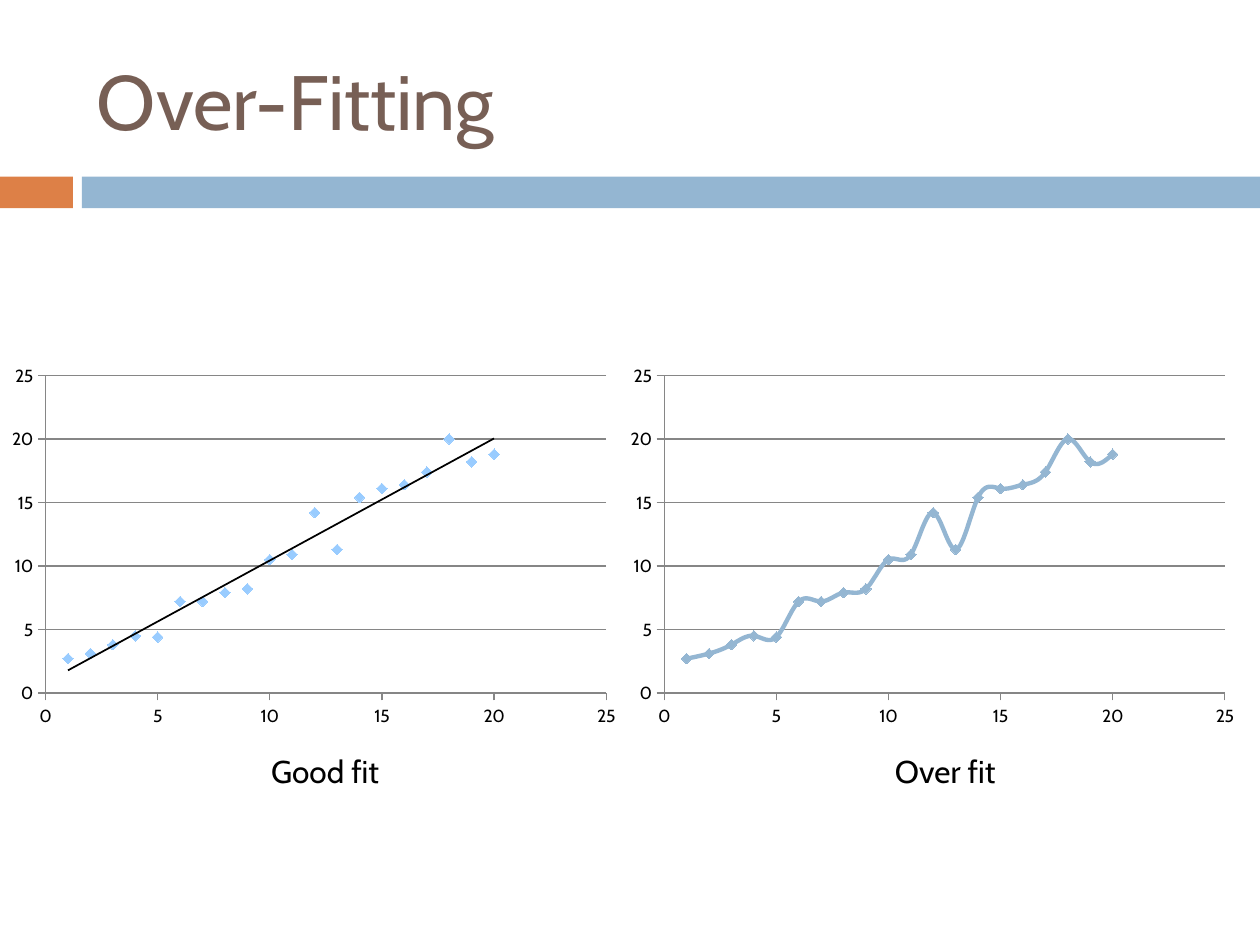
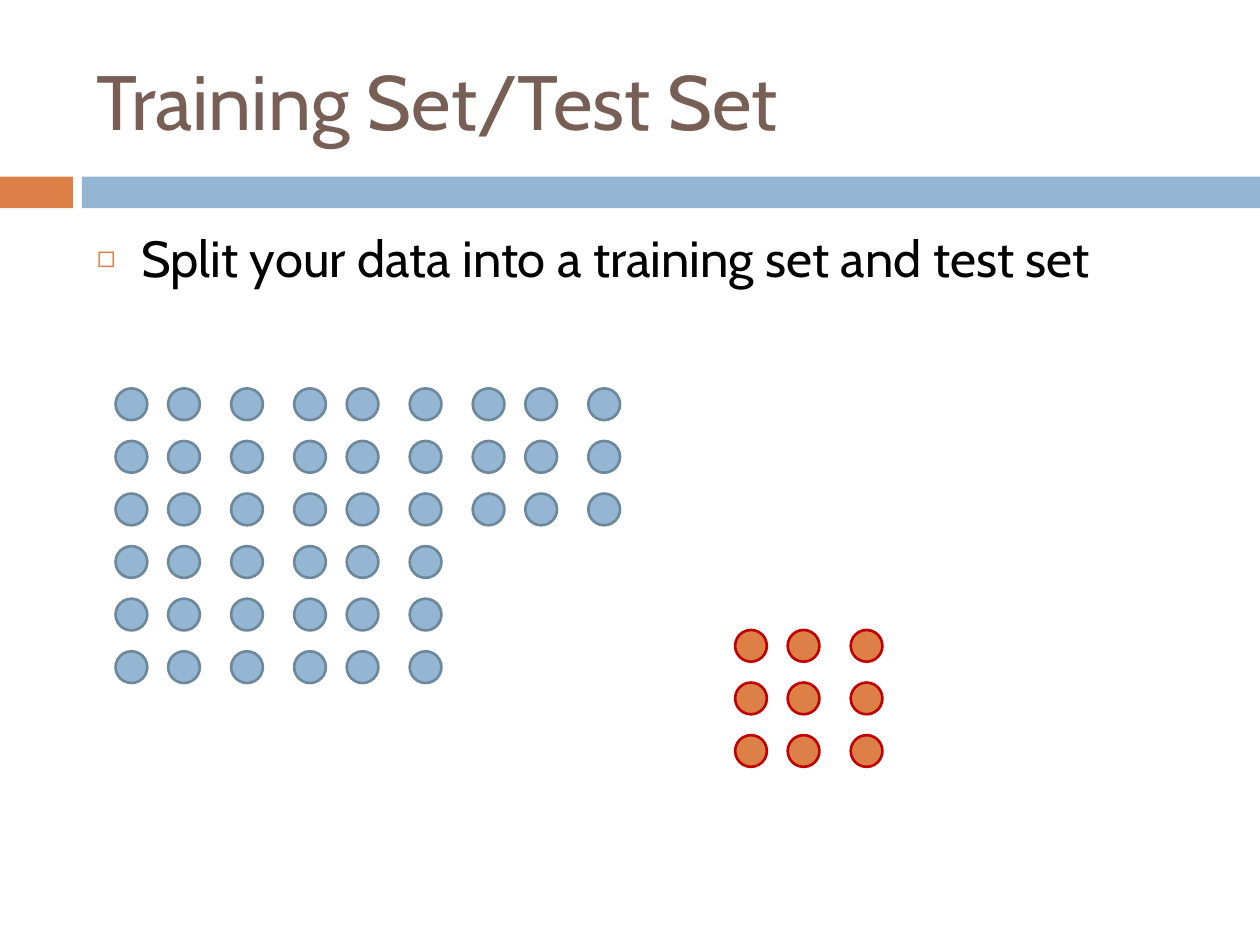
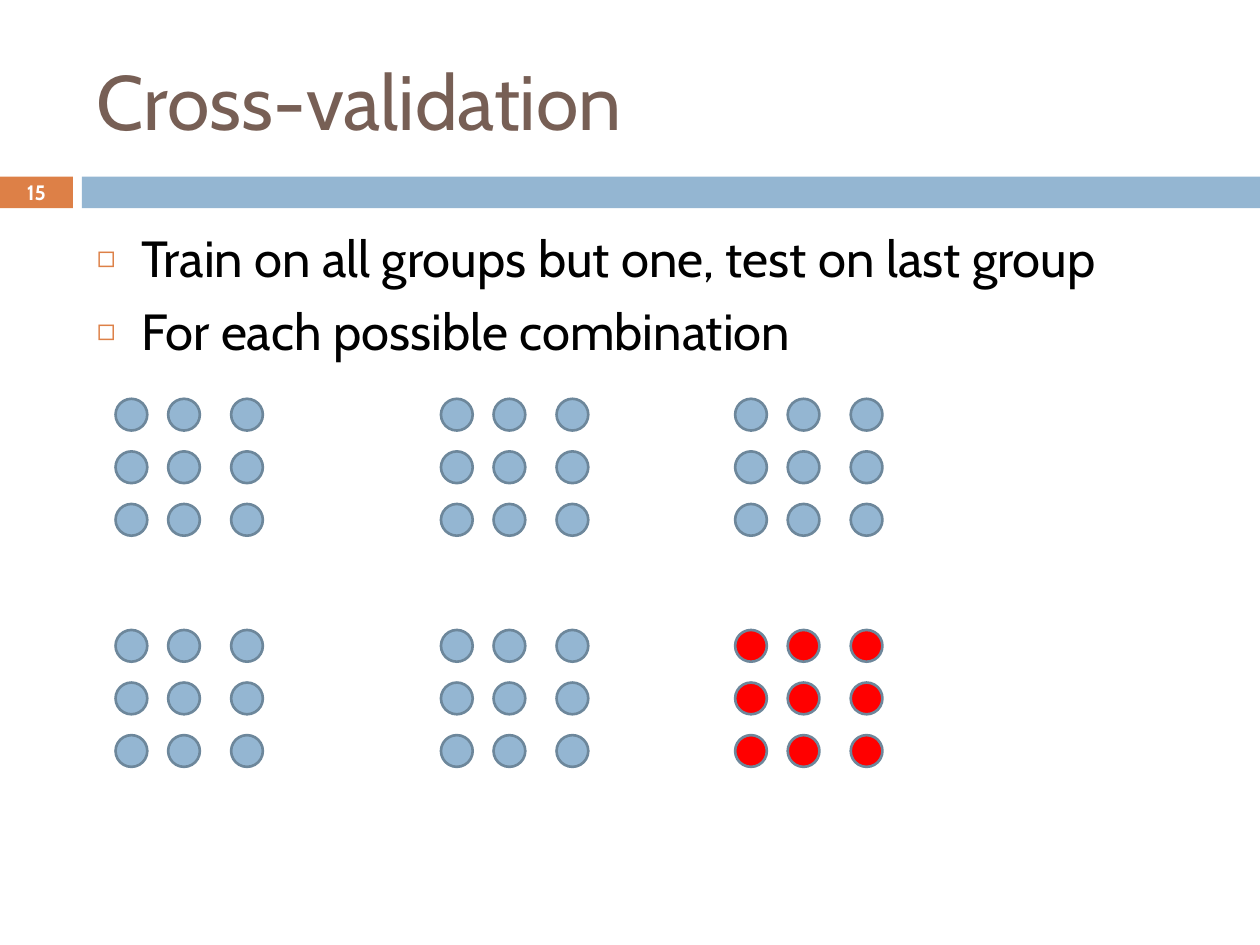
from dataclasses import dataclass
from itertools import product

from lxml.etree import SubElement
from pptx import Presentation
from pptx.chart.data import XyChartData
from pptx.dml.color import RGBColor
from pptx.enum.chart import XL_CHART_TYPE as Chart, XL_MARKER_STYLE as Marker
from pptx.enum.chart import XL_TICK_MARK as Tick
from pptx.enum.shapes import MSO_SHAPE as Shape
from pptx.enum.text import MSO_ANCHOR as Anchor, MSO_AUTO_SIZE as AutoSize
from pptx.enum.text import PP_ALIGN as Align
from pptx.oxml import parse_xml
from pptx.oxml.ns import nsdecls, qn
from pptx.util import Cm, Pt

FONT = "Cabin"
BLACK, WHITE, BROWN = "000000", "FFFFFF", "775F55"
ORANGE, BLUE, SLATE, GREY = "DD8047", "94B6D2", "6D879B", "868686"
LIGHT_BLUE, DARK_RED, RED = "99CCFF", "C00000", "FF0000"

TITLE_ONLY, TITLE_AND_BODY = 5, 1

DOT = 0.64
DOT_COLUMNS = (0, 1.06, 2.33)
DOT_ROWS = (0, 1.06, 2.12)

SAMPLES = (2.7, 3.1, 3.8, 4.5, 4.4, 7.2, 7.2, 7.9, 8.2, 10.5,
           10.9, 14.2, 11.3, 15.4, 16.1, 16.4, 17.4, 20, 18.2, 18.8)


@dataclass(frozen=True)
class Box:
    """A rectangle in centimetres."""
    left: float
    top: float
    width: float
    height: float

    def lengths(self) -> tuple:
        return Cm(self.left), Cm(self.top), Cm(self.width), Cm(self.height)


@dataclass(frozen=True)
class DotStyle:
    fill: str
    line: str


@dataclass(frozen=True)
class FitChart:
    caption: str
    box: Box
    caption_box: Box
    kind: Chart
    marker: str
    over_fit: bool


TITLE_BOX = Box(1.7, 0.64, 22.66, 2.74)
BODY_BOX = Box(1.7, 4.45, 22.66, 12.5)
NUMBER_BOX = Box(0, 3.53, 1.47, 0.69)
BANDS = ((Box(0, 3.56, 1.47, 0.64), ORANGE),
         (Box(1.65, 3.56, 23.75, 0.64), BLUE))

TRAINING = DotStyle(BLUE, SLATE)
TEST = DotStyle(ORANGE, DARK_RED)
HELD_OUT = DotStyle(RED, SLATE)

FIT_CHARTS = (
    FitChart("Over fit", Box(12.5, 7.19, 12.7, 7.62), Box(13.34, 15.04, 11.43, 1.02),
             Chart.XY_SCATTER_SMOOTH, BLUE, True),
    FitChart("Good fit", Box(0.03, 7.19, 12.7, 7.62), Box(0.84, 15.04, 11.43, 1.02),
             Chart.XY_SCATTER, LIGHT_BLUE, False),
)


def rgb(color: str) -> RGBColor:
    return RGBColor.from_string(color)


def assign(obj, **values) -> None:
    for name, value in values.items():
        setattr(obj, name, value)


def set_font(font, size: float, color: str, bold: bool = False) -> None:
    assign(font, name=FONT, size=Pt(size), bold=bold)
    font.color.rgb = rgb(color)


def set_line(line, color: str, width: float) -> None:
    line.color.rgb = rgb(color)
    line.width = Pt(width)


def place(sp, box: Box) -> None:
    assign(sp, **dict(zip(("left", "top", "width", "height"), box.lengths())))


def add_filled(s, preset: Shape, box: Box, fill: str):
    sp = s.shapes.add_shape(preset, *box.lengths())
    sp.shadow.inherit = False
    sp.fill.solid()
    sp.fill.fore_color.rgb = rgb(fill)
    sp.line.fill.background()
    return sp


def add_text(s, text: str, box: Box, size: float, color: str, bold: bool = False) -> None:
    """Add a centred text box."""
    tf = s.shapes.add_textbox(*box.lengths()).text_frame
    assign(tf, word_wrap=True, vertical_anchor=Anchor.MIDDLE)
    p = tf.paragraphs[0]
    p.alignment = Align.CENTER
    r = p.add_run()
    r.text = text
    set_font(r.font, size, color, bold)


def add_slide(prs, layout: int, title: str):
    """Add a slide with the shared bands and title style."""
    s = prs.slides.add_slide(prs.slide_layouts[layout])
    for box, color in BANDS:
        add_filled(s, Shape.RECTANGLE, box, color)
    sp = s.shapes.title
    place(sp, TITLE_BOX)
    tf = sp.text_frame
    tf.text = title
    assign(tf, auto_size=AutoSize.NONE, vertical_anchor=Anchor.MIDDLE)
    p = tf.paragraphs[0]
    p.alignment = Align.LEFT
    set_font(p.runs[0].font, 44, BROWN)
    return s


def fill_body(s, items: list[str]) -> None:
    sp = s.placeholders[1]
    place(sp, BODY_BOX)
    tf = sp.text_frame
    tf.text = "\n".join(items)
    tf.auto_size = AutoSize.NONE
    for p in tf.paragraphs:
        p.space_before = Pt(7)
        set_font(p.runs[0].font, 29, BLACK)
        add_bullet(p)


def add_bullet(p) -> None:
    pPr = p._p.get_or_add_pPr()
    pPr.set("marL", str(Cm(0.89)))
    pPr.set("indent", str(-Cm(0.89)))
    SubElement(SubElement(pPr, qn("a:buClr")), qn("a:srgbClr"), val=ORANGE)
    SubElement(pPr, qn("a:buSzPct"), val="60000")
    SubElement(pPr, qn("a:buChar"), char="◻")


def add_dot_group(s, left: float, top: float, style: DotStyle) -> None:
    """Draw one group of three by three dots."""
    for dx, dy in product(DOT_COLUMNS, DOT_ROWS):
        dot = add_filled(s, Shape.OVAL, Box(left + dx, top + dy, DOT, DOT), style.fill)
        set_line(dot.line, style.line, 1.5)


def add_trendline(series) -> None:
    series._element.find(qn("c:xVal")).addprevious(parse_xml(
        f'<c:trendline {nsdecls("c", "a")}><c:spPr><a:ln w="{Pt(1)}"><a:solidFill>'
        f'<a:srgbClr val="{BLACK}"/></a:solidFill></a:ln></c:spPr>'
        '<c:trendlineType val="linear"/><c:dispRSqr val="0"/><c:dispEq val="0"/>'
        '</c:trendline>'))


def set_plot_layout(chart) -> None:
    """Fix the inner plot area as fractions of the chart."""
    plot_area = chart._chartSpace.chart.plotArea
    for old in plot_area.findall(qn("c:layout")):
        plot_area.remove(old)
    layout = parse_xml(f'<c:layout {nsdecls("c")}/>')
    manual = SubElement(layout, qn("c:manualLayout"))
    for tag, value in (("layoutTarget", "inner"), ("xMode", "edge"), ("yMode", "edge"),
                       ("x", "0.07"), ("y", "0.05"), ("w", "0.89"), ("h", "0.84")):
        SubElement(manual, qn(f"c:{tag}"), val=value)
    plot_area.insert(0, layout)


def add_fit_chart(s, fit: FitChart) -> None:
    data = XyChartData()
    points = data.add_series("Series 1")
    for x, y in enumerate(SAMPLES, 1):
        points.add_data_point(x, y)
    chart = s.shapes.add_chart(fit.kind, *fit.box.lengths(), data).chart
    assign(chart, has_legend=False, has_title=False)
    set_font(chart.font, 10, BLACK)
    set_plot_layout(chart)

    for axis in (chart.category_axis, chart.value_axis):
        assign(axis, minimum_scale=0, maximum_scale=25, major_unit=5,
               major_tick_mark=Tick.OUTSIDE, minor_tick_mark=Tick.NONE,
               has_major_gridlines=axis is not chart.category_axis, has_title=False)
        set_line(axis.format.line, GREY, 0.75)
    chart.category_axis.has_major_gridlines = False
    set_line(chart.value_axis.major_gridlines.format.line, GREY, 0.75)

    plot = chart.plots[0]
    plot.vary_by_categories = False
    series = plot.series[0]
    assign(series.marker, style=Marker.DIAMOND, size=6)
    series.marker.format.fill.solid()
    series.marker.format.fill.fore_color.rgb = rgb(fit.marker)
    series.marker.format.line.fill.background()
    series._element.find(qn("c:smooth")).set("val", str(int(fit.over_fit)))
    if fit.over_fit:
        set_line(series.format.line, BLUE, 2.5)
    else:
        series.format.line.fill.background()
        add_trendline(series)


def build_over_fitting(prs) -> None:
    s = add_slide(prs, TITLE_ONLY, "Over-Fitting")
    for fit in FIT_CHARTS:
        add_fit_chart(s, fit)
        add_text(s, fit.caption, fit.caption_box, 18, BLACK)


def build_training_test(prs) -> None:
    s = add_slide(prs, TITLE_AND_BODY, "Training Set/Test Set")
    fill_body(s, ["Split your data into a training set and test set"])
    for row, groups in enumerate((3, 2)):
        for column in range(groups):
            add_dot_group(s, 2.33 + 3.6 * column, 7.83 + 3.18 * row, TRAINING)
    add_dot_group(s, 14.82, 12.7, TEST)


def build_cross_validation(prs) -> None:
    s = add_slide(prs, TITLE_AND_BODY, "Cross-validation")
    fill_body(s, ["Train on all groups but one, test on last group",
                  "For each possible combination"])
    add_text(s, "15", NUMBER_BOX, 11.9, WHITE, bold=True)
    *training, last = product((8.04, 12.7), (2.33, 8.89, 14.82))
    for top, left in training:
        add_dot_group(s, left, top, TRAINING)
    add_dot_group(s, last[1], last[0], HELD_OUT)


def main() -> None:
    prs = Presentation()
    assign(prs, slide_width=Cm(25.4), slide_height=Cm(19.05))
    build_over_fitting(prs)
    build_training_test(prs)
    build_cross_validation(prs)
    prs.save("out.pptx")


if __name__ == "__main__":
    main()
